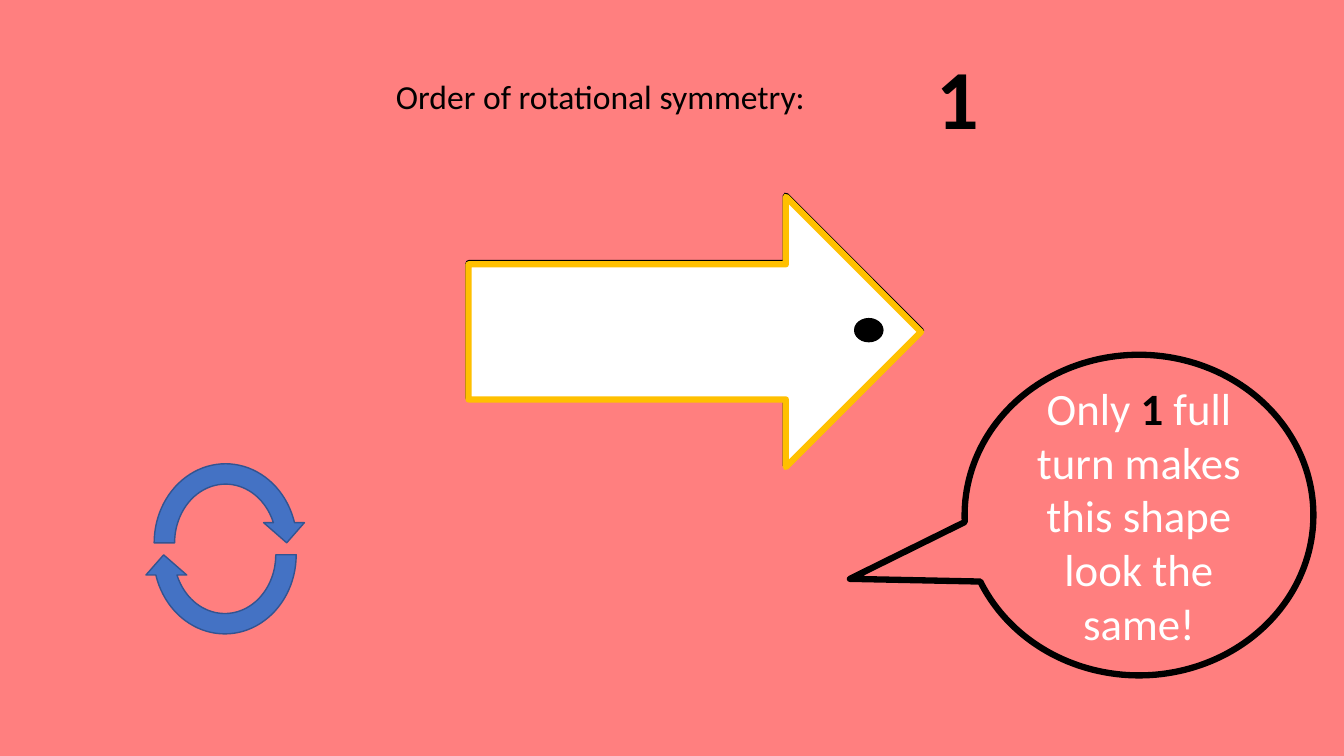
from pptx import Presentation
from pptx.dml.color import RGBColor
from pptx.enum.shapes import MSO_SHAPE as Kind
from pptx.enum.text import MSO_ANCHOR as Anchor, PP_ALIGN as Align
from pptx.util import Cm, Pt

HUES = {
    "back": "FF7F7F", "ink": "000000", "paper": "FFFFFF",
    "gold": "FFC000", "blue": "4472C4", "navy": "325491",
}
FONT = "Calibri"


def hue(name):
    return RGBColor.from_string(HUES[name])


def draw(parent, kind, box, fill, line, width):
    shape = parent.add_shape(kind, *map(Cm, box))
    shape.shadow.inherit = False
    if fill:
        shape.fill.solid()
        shape.fill.fore_color.rgb = hue(fill)
    else:
        shape.fill.background()
    shape.line.color.rgb = hue(line)
    shape.line.width = Pt(width)
    return shape


def style(font, size, color, bold=False):
    font.name, font.size, font.bold = FONT, Pt(size), bold
    font.color.rgb = hue(color)


def write(shapes, box, text, size, bold=False):
    frame = shapes.add_textbox(*map(Cm, box)).text_frame
    frame.word_wrap = True
    para = frame.paragraphs[0]
    para.text = text
    style(para.font, size, "ink", bold)


def add_head(shapes, x, y, w, h):
    """Question on the left, large answer at its right end."""
    write(shapes, (x, y + 0.76, 13.59, 1.27), "Order of rotational symmetry:", 24)
    write(shapes, (x + w - 2.69, y, 2.69, h), "1", 60, True)


def add_arrow(shapes, x, y, w, h):
    """Fixed outline under a movable arrow with its marker dot."""
    draw(shapes, Kind.RIGHT_ARROW, (x, y, w, h), "paper", "ink", 4.5)
    group = shapes.add_group_shape().shapes
    draw(group, Kind.RIGHT_ARROW, (x, y + 0.03, w, h), "paper", "gold", 4.5)
    draw(group, Kind.OVAL, (x + 9.73, y + 3.1, 0.71, 0.58), "ink", "ink", 1)


def add_bubble(shapes, x, y, w, h):
    """Speech bubble with the explanation."""
    bubble = draw(shapes, Kind.OVAL_CALLOUT, (x, y, w, h), None, "ink", 4.5)
    bubble.adjustments[0] = -0.829
    bubble.adjustments[1] = 0.199
    frame = bubble.text_frame
    frame.word_wrap = True
    frame.vertical_anchor = Anchor.MIDDLE
    para = frame.paragraphs[0]
    para.alignment = Align.CENTER
    for text, color, bold in (
        ("Only ", "paper", False),
        ("1", "ink", True),
        (" full turn makes this shape look the same!", "paper", False),
    ):
        run = para.add_run()
        run.text = text
        style(run.font, 32, color, bold)


def add_turn(shapes, x, y, w, h):
    """Two half-turn arrows that form a cycle."""
    for dx, dy, angle in ((0.02, 0, 0), (0, 0.3, 180)):
        box = (x + dx, y + dy, w, h)
        draw(shapes, Kind.CIRCULAR_ARROW, box, "blue", "navy", 1).rotation = angle


def main():
    deck = Presentation()
    deck.slide_width, deck.slide_height = Cm(33.87), Cm(19.05)
    slide = deck.slides.add_slide(deck.slide_layouts[6])
    slide.background.fill.solid()
    slide.background.fill.fore_color.rgb = hue("back")
    shapes = slide.shapes
    add_head(shapes, 9.73, 1.02, 16.3, 2.82)
    add_arrow(shapes, 11.81, 4.93, 11.4, 6.81)
    add_bubble(shapes, 24.31, 8.94, 8.79, 8.08)
    add_turn(shapes, 3.61, 11.43, 4.11, 4.5)
    deck.save("out.pptx")


if __name__ == "__main__":
    main()
